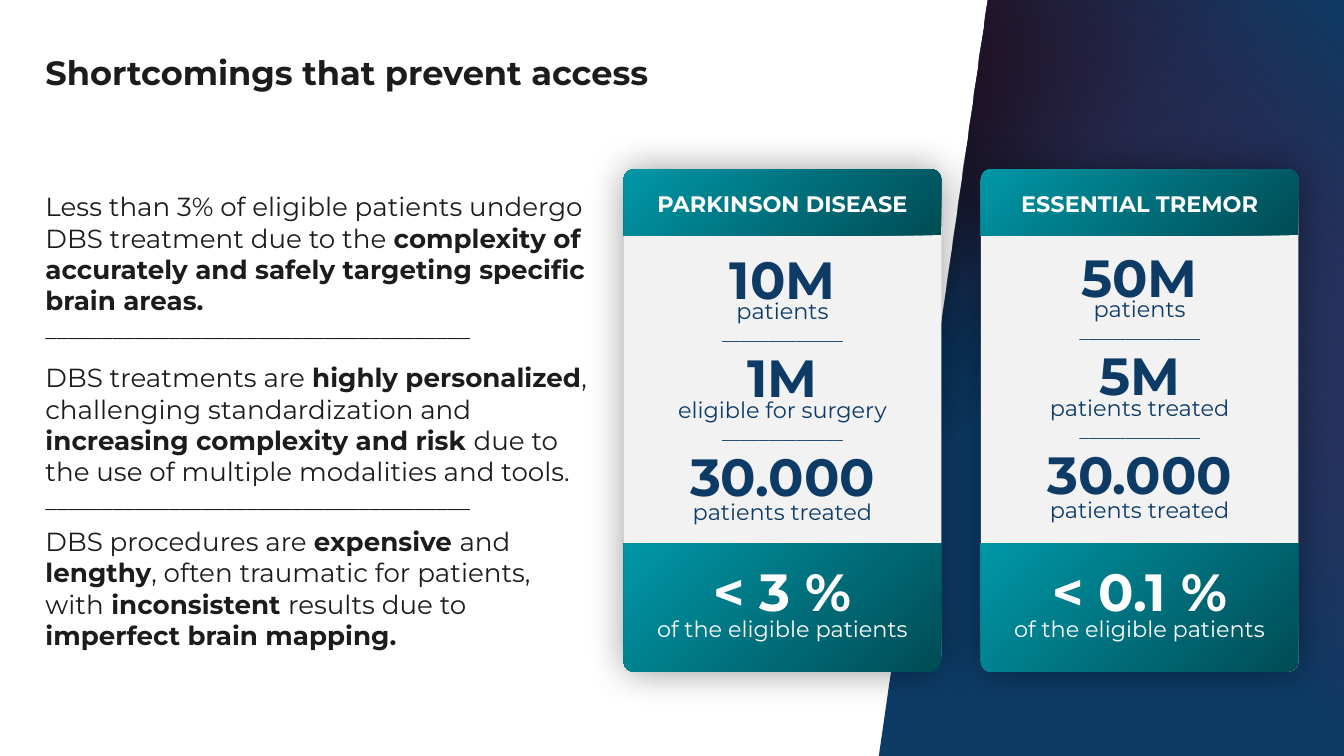
from typing import NamedTuple

from lxml import etree
from pptx import Presentation
from pptx.dml.color import RGBColor
from pptx.enum.shapes import MSO_SHAPE
from pptx.enum.text import MSO_ANCHOR, PP_ALIGN
from pptx.oxml.ns import qn
from pptx.util import Cm, Pt

ROUNDED, ROUND_ENDS = MSO_SHAPE.ROUNDED_RECTANGLE, MSO_SHAPE.ROUND_2_SAME_RECTANGLE
TOP, MIDDLE = MSO_ANCHOR.TOP, MSO_ANCHOR.MIDDLE
LEFT, CENTER = PP_ALIGN.LEFT, PP_ALIGN.CENTER


class Theme(NamedTuple):
    font: str = "Montserrat"
    ink: str = "1C1C1C"
    navy: str = "0D3B66"
    plum: str = "741B47"
    black: str = "000000"
    white: str = "FFFFFF"
    card: str = "F2F2F2"
    teal: str = "0097A7"
    deep_teal: str = "004C54"
    figure: int = 28
    title: int = 18
    body: int = 14
    label: int = 12
    rule: int = 10


class Stop(NamedTuple):
    position: int
    color: str
    alpha: int = 100


class Line(NamedTuple):
    """A paragraph; the parts of text between ** marks are bold."""
    text: str
    size: int
    spacing: float = 1.0
    before: int = 0
    after: int = 0


class Card(NamedTuple):
    heading: str
    figures: tuple[tuple[str, str], ...]
    share: str
    corner: float


THEME = Theme()
SLIDE_WIDTH, SLIDE_HEIGHT = 25.4, 14.29
CARD_LEFT, CARD_TOP, CARD_STEP = 11.79, 3.2, 6.75
CARD_WIDTH, CARD_HEIGHT = 6, 9.5
HEADER_HEIGHT, FOOTER_HEIGHT, BAND_RADIUS = 1.25, 2.43, 0.19

PANEL_OUTLINE = ((18.67, 0), (SLIDE_WIDTH, 0), (SLIDE_WIDTH, SLIDE_HEIGHT), (16.61, SLIDE_HEIGHT))
PANEL_SHADES = (
    ((Stop(10, THEME.black), Stop(30, THEME.black, 0)), 45),
    ((Stop(0, THEME.black, 75), Stop(50, THEME.black, 0)), 70),
    ((Stop(0, THEME.navy), Stop(60, THEME.plum, 0)), None),
)
BAND_STOPS = (Stop(0, THEME.deep_teal), Stop(100, THEME.teal))

TITLE = Line("**Shortcomings that prevent access**", THEME.title)
BODY_RULE = "_" * 38
BODY = (
    Line("Less than 3% of eligible patients undergo DBS treatment due to the "
         "**complexity of accurately and safely targeting specific brain areas.**", THEME.body),
    Line(BODY_RULE, THEME.label, after=10),
    Line("DBS treatments are **highly personalized**, challenging standardization and **increasing "
         "complexity and risk **due to the use of multiple modalities and tools.", THEME.body),
    Line(BODY_RULE, THEME.label, after=6),
    Line("DBS procedures are **expensive **and** lengthy**, often traumatic for patients,\n"
         "with** inconsistent **results due to **imperfect brain mapping.**", THEME.body),
)
CARDS = (
    Card("PARKINSON DISEASE", (("10M", "patients"), ("1M", "eligible for surgery"),
                               ("30.000", "patients treated")), "< 3 %", 0.05),
    Card("ESSENTIAL TREMOR", (("50M", "patients"), ("5M", "patients treated"),
                              ("30.000", "patients treated")), "< 0.1 %", 0.03),
)


def add_child(parent, tag: str, **attributes):
    return etree.SubElement(parent, qn(tag), {key: str(value) for key, value in attributes.items()})


def add_color(parent, color: str, alpha: int) -> None:
    add_child(add_child(parent, "a:srgbClr", val=color), "a:alpha", val=alpha * 1000)


def fill_solid(shape, color: str) -> None:
    shape.fill.solid()
    shape.fill.fore_color.rgb = RGBColor.from_string(color)


def fill_gradient(shape, stops: tuple[Stop, ...], angle: int | None) -> None:
    """Fill along an angle, or outwards from the top right corner without one."""
    shape.fill.gradient()
    gradient = shape._element.spPr.find(qn("a:gradFill"))
    for child in list(gradient):
        gradient.remove(child)
    stop_list = add_child(gradient, "a:gsLst")
    for stop in stops:
        add_color(add_child(stop_list, "a:gs", pos=stop.position * 1000), stop.color, stop.alpha)
    if angle is None:
        add_child(add_child(gradient, "a:path", path="circle"), "a:fillToRect", l=100000, b=100000)
    else:
        add_child(gradient, "a:lin", ang=angle * 60000, scaled=0)


def make_plain(shape) -> None:
    shape.shadow.inherit = False
    shape.line.fill.background()


def write_lines(shape, lines, color: str, align=LEFT, anchor=TOP, insets=(0, 0, 0)) -> None:
    """Write paragraphs with top, right and bottom insets in centimetres."""
    frame = shape.text_frame
    frame.word_wrap, frame.vertical_anchor = True, anchor
    frame.margin_left = 0
    frame.margin_top, frame.margin_right, frame.margin_bottom = (Cm(inset) for inset in insets)
    for index, line in enumerate(lines):
        para = frame.paragraphs[0] if index == 0 else frame.add_paragraph()
        para.alignment, para.line_spacing = align, line.spacing
        para.space_before, para.space_after = Pt(line.before), Pt(line.after)
        for part_index, part in enumerate(line.text.split("**")):
            for row_index, text in enumerate(part.split("\n")):
                if row_index:
                    para.add_line_break()
                if text:
                    span = para.add_run()
                    span.text = text
                    span.font.name, span.font.size = THEME.font, Pt(line.size)
                    span.font.bold = part_index % 2 == 1
                    span.font.color.rgb = RGBColor.from_string(color)


def add_panel_layer(shapes):
    points = [(Cm(x), Cm(y)) for x, y in PANEL_OUTLINE]
    builder = shapes.build_freeform(*points[0], scale=1.0)
    builder.add_line_segments(points[1:], close=True)
    layer = builder.convert_to_shape()
    make_plain(layer)
    return layer


def add_band(shapes, left: float, top: float, height: float, radii, lines, anchor, insets) -> None:
    """Add a teal band with the given top and bottom corner radii."""
    band = shapes.add_shape(ROUND_ENDS, Cm(left), Cm(top), Cm(CARD_WIDTH), Cm(height))
    for index, radius in enumerate(radii):
        band.adjustments[index] = radius / height
    make_plain(band)
    fill_gradient(band, BAND_STOPS, 225)
    write_lines(band, lines, THEME.white, CENTER, anchor, insets)


def figure_lines(figures: tuple[tuple[str, str], ...]) -> list[Line]:
    lines = []
    last = len(figures) - 1
    for index, (value, label) in enumerate(figures):
        lines.append(Line(f"**{value}**", THEME.figure, 0.6, before=12 if index else 0))
        lines.append(Line(label, THEME.label, 0.75 if index == last else 0.6))
        if index < last:
            lines.append(Line("_" * 13, THEME.rule))
    return lines


def add_card(shapes, card: Card, left: float) -> None:
    base = shapes.add_shape(ROUNDED, Cm(left), Cm(CARD_TOP), Cm(CARD_WIDTH), Cm(CARD_HEIGHT))
    base.adjustments[0] = card.corner
    make_plain(base)
    fill_solid(base, THEME.card)
    effects = base._element.spPr.find(qn("a:effectLst"))
    add_color(add_child(effects, "a:outerShdw", blurRad=Pt(20), algn="ctr"), THEME.black, 40)
    write_lines(base, figure_lines(card.figures), THEME.navy, CENTER, insets=(1.8, 0, 0))
    heading = [Line(f"**{card.heading}**", THEME.label, 0.75)]
    add_band(shapes, left, CARD_TOP, HEADER_HEIGHT, (BAND_RADIUS, 0), heading, TOP, (0.45, 0, 0))
    share = [Line(f"**{card.share}**", THEME.figure, 0.75),
             Line("of the eligible patients", THEME.label, 0.75)]
    add_band(shapes, left, CARD_TOP + CARD_HEIGHT - FOOTER_HEIGHT, FOOTER_HEIGHT,
             (0, BAND_RADIUS), share, MIDDLE, (0.13, 0, 0.07))


deck = Presentation()
deck.slide_width, deck.slide_height = Cm(SLIDE_WIDTH), Cm(SLIDE_HEIGHT)
page = deck.slides.add_slide(deck.slide_layouts[6])
fill_solid(add_panel_layer(page.shapes), THEME.navy)
for shade_stops, shade_angle in PANEL_SHADES:
    fill_gradient(add_panel_layer(page.shapes), shade_stops, shade_angle)
title_box = page.shapes.add_textbox(Cm(0.86), Cm(0.99), Cm(14.22), Cm(0.76))
write_lines(title_box, [TITLE], THEME.ink)
body_box = page.shapes.add_textbox(Cm(0.86), Cm(CARD_TOP), Cm(11), Cm(CARD_HEIGHT))
write_lines(body_box, BODY, THEME.ink, anchor=MIDDLE, insets=(0, 0.51, 0))
for number, disease in enumerate(CARDS):
    add_card(page.shapes, disease, CARD_LEFT + number * CARD_STEP)
deck.save("out.pptx")
